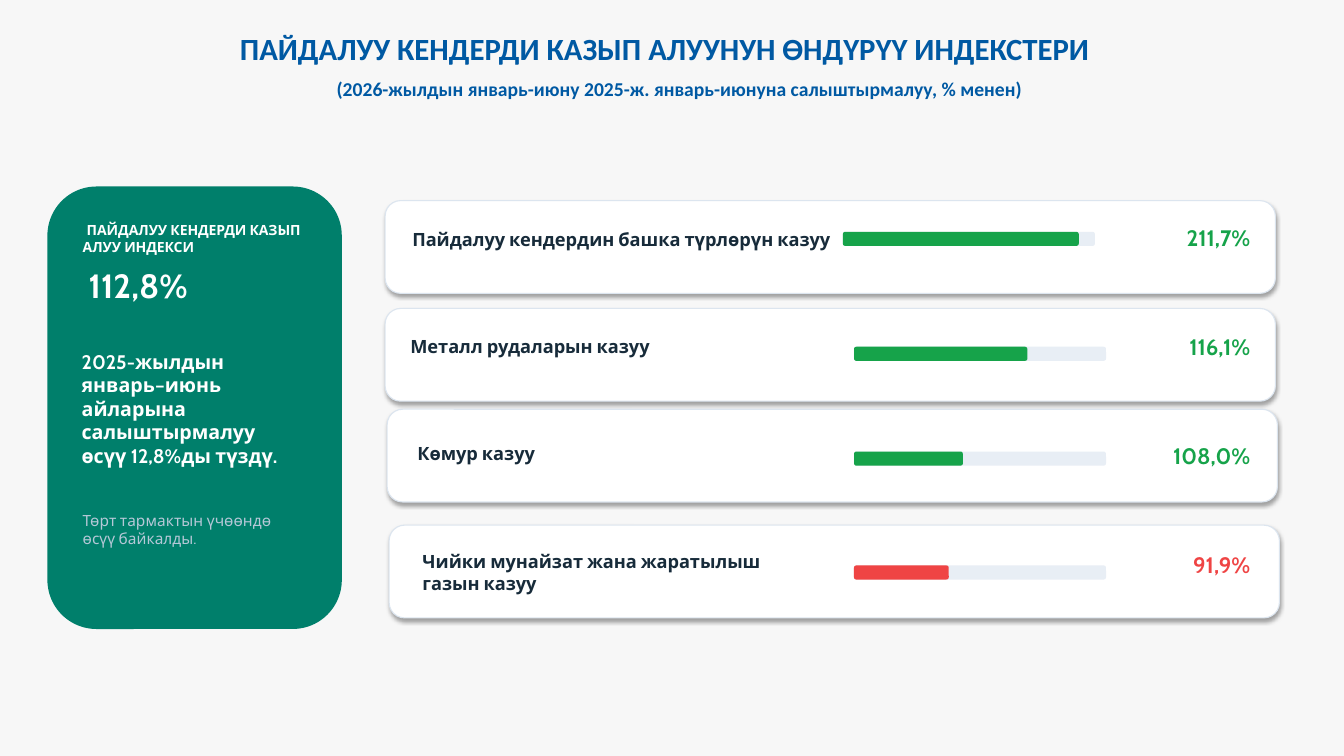
from lxml.etree import SubElement
from pptx import Presentation
from pptx.dml.color import RGBColor
from pptx.enum.shapes import MSO_SHAPE
from pptx.enum.text import MSO_ANCHOR, MSO_AUTO_SIZE, PP_ALIGN
from pptx.oxml.ns import qn
from pptx.util import Inches, Pt

BACKGROUND = RGBColor(0xF7, 0xF7, 0xF7)
WHITE = RGBColor(0xFF, 0xFF, 0xFF)
BLUE = RGBColor(0x00, 0x59, 0xA3)
TEAL = RGBColor(0x00, 0x7F, 0x6B)
PALE = RGBColor(0xB5, 0xC8, 0xD7)
DARK = RGBColor(0x17, 0x2B, 0x3A)
BORDER = RGBColor(0xDC, 0xE5, 0xEF)
TRACK = RGBColor(0xE8, 0xEE, 0xF5)
GREEN = RGBColor(0x16, 0xA3, 0x4A)
RED = RGBColor(0xEF, 0x44, 0x44)

CARD_SIZE = (8.83, 0.92)
TRACK_WIDTH, BAR_HEIGHT = 2.5, 0.14

# Label, value, colour, card corner, label corner, bar corner, bar width, value top
INDUSTRIES = [
    ("Пайдалуу кендердин башка түрлөрүн казуу", "211,7%", GREEN,
     (3.82, 1.99), (4.09, 2.26), (8.36, 2.3), 2.34, 2.22),
    ("Металл рудаларын казуу", "116,1%", GREEN,
     (3.82, 3.06), (4.07, 3.33), (8.47, 3.44), 1.72, 3.31),
    ("Көмур казуу", "108,0%", GREEN,
     (3.84, 4.06), (4.14, 4.39), (8.47, 4.48), 1.08, 4.39),
    ("Чийки мунайзат жана жаратылыш\nгазын казуу", "91,9%", RED,
     (3.86, 5.21), (4.19, 5.46), (8.47, 5.61), 0.94, 5.47),
]


def format_text(shape, text, size, color, font="Cabin", bold=True,
                align=PP_ALIGN.LEFT, inset=0):
    frame = shape.text_frame
    frame.text = text
    margin = Inches(inset)
    frame_format = {
        "word_wrap": True,
        "auto_size": MSO_AUTO_SIZE.SHAPE_TO_FIT_TEXT,
        "vertical_anchor": MSO_ANCHOR.TOP,
        "margin_left": margin,
        "margin_right": margin,
        "margin_top": margin / 2,
        "margin_bottom": margin / 2,
    }
    for name, value in frame_format.items():
        setattr(frame, name, int(value) if name.startswith("margin") else value)
    for paragraph in frame.paragraphs:
        paragraph.alignment = align
        for run in paragraph.runs:
            for name, value in {"name": font, "size": Pt(size), "bold": bold}.items():
                setattr(run.font, name, value)
            run.font.color.rgb = color


def add_text(slide, box, text, size, color, **options):
    shape = slide.shapes.add_textbox(*map(Inches, box))
    format_text(shape, text, size, color, **options)
    return shape


def add_rounded(slide, box, fill):
    shape = slide.shapes.add_shape(MSO_SHAPE.ROUNDED_RECTANGLE, *map(Inches, box))
    shape.shadow.inherit = False
    shape.fill.solid()
    shape.fill.fore_color.rgb = fill
    shape.line.fill.background()
    return shape


def add_card(slide, corner):
    """Add a white bordered card with a soft shadow below it."""
    card = add_rounded(slide, (*corner, *CARD_SIZE), WHITE)
    card.line.color.rgb = BORDER
    card.line.width = Pt(0.8)
    effects = card.element.spPr.find(qn("a:effectLst"))
    shadow = SubElement(effects, qn("a:outerShdw"), blurRad=str(Pt(3.1)),
                        dist=str(Pt(1.8)), dir="5400000", rotWithShape="0")
    color = SubElement(shadow, qn("a:srgbClr"), val="000000")
    SubElement(color, qn("a:alpha"), val="35000")


def add_heading(slide):
    title = slide.shapes.title
    box = {"left": 2.28, "top": 0.24, "width": 10.05, "height": 0.47}
    for name, value in box.items():
        setattr(title, name, Inches(value))
    format_text(title, "ПАЙДАЛУУ КЕНДЕРДИ КАЗЫП АЛУУНУН ӨНДҮРҮҮ ИНДЕКСТЕРИ",
                22, BLUE, font="Calibri", inset=0.1)
    add_text(slide, (3.24, 0.71, 7.97, 0.34),
             "(2026-жылдын январь-июну 2025-ж. январь-июнуна салыштырмалуу, % менен)",
             14, BLUE, font="Calibri", inset=0.1)


def add_summary_panel(slide):
    add_rounded(slide, (0.47, 1.85, 2.92, 4.39), TEAL)
    caption = add_text(slide, (0.82, 2.2, 2.29, 0.5),
                       "ПАЙДАЛУУ КЕНДЕРДИ КАЗЫП АЛУУ ИНДЕКСИ", 10, WHITE)
    properties = caption.text_frame.paragraphs[0]._p.get_or_add_pPr()
    properties.set("indent", str(Inches(0.04)))
    add_text(slide, (0.88, 2.63, 2.36, 0.4), "112,8%", 24, WHITE)
    add_text(slide, (0.81, 3.47, 2.19, 0.94),
             "2025-жылдын январь–июнь айларына салыштырмалуу өсүү 12,8%ды түздү.",
             14, WHITE)
    add_text(slide, (0.82, 5.07, 2.22, 0.37),
             "Төрт тармактын үчөөндө өсүү байкалды.", 11, PALE, bold=False)


def add_industry(slide, label, value, color, card, label_corner, bar, bar_width, value_top):
    add_card(slide, card)
    add_text(slide, (*label_corner, 4.17, 0.22), label, 13, DARK)
    for width, fill in ((TRACK_WIDTH, TRACK), (bar_width, color)):
        add_rounded(slide, (*bar, width, BAR_HEIGHT), fill)
    add_text(slide, (11.21, value_top, 1.19, 0.27), value, 16, color,
             align=PP_ALIGN.RIGHT)


def main():
    presentation = Presentation()
    presentation.slide_width = Inches(13.33)
    presentation.slide_height = Inches(7.5)
    slide = presentation.slides.add_slide(presentation.slide_layouts[5])
    slide.background.fill.solid()
    slide.background.fill.fore_color.rgb = BACKGROUND
    add_heading(slide)
    add_summary_panel(slide)
    for industry in INDUSTRIES:
        add_industry(slide, *industry)
    presentation.save("out.pptx")


if __name__ == "__main__":
    main()
